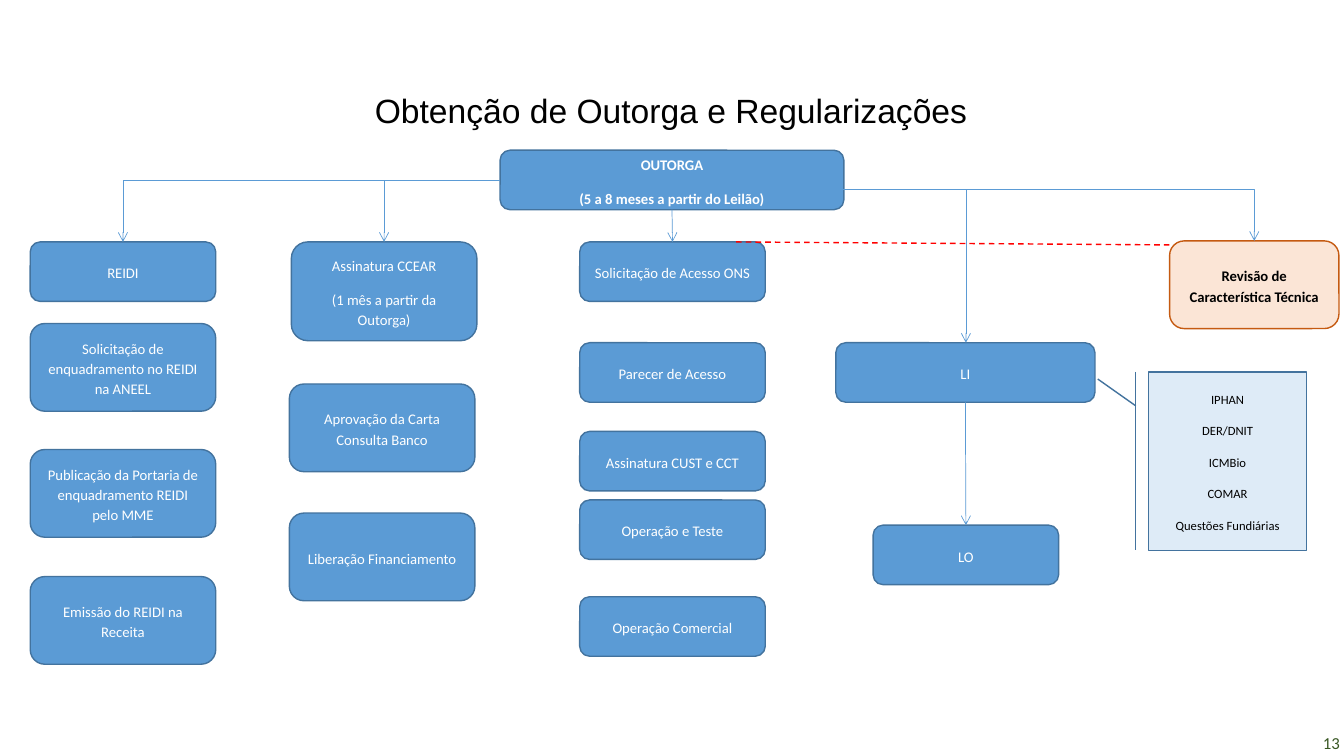
from dataclasses import dataclass

import lxml.etree
import pptx
import pptx.dml.color
import pptx.enum.dml
import pptx.enum.shapes
import pptx.enum.text
import pptx.oxml.ns
import pptx.util

Inches = pptx.util.Inches
SHAPE = pptx.enum.shapes.MSO_SHAPE
CONNECTOR = pptx.enum.shapes.MSO_CONNECTOR
ALIGN = pptx.enum.text.PP_ALIGN
qn = pptx.oxml.ns.qn


@dataclass(frozen=True)
class Theme:
    blue: str = "5B9BD5"
    outline: str = "43739E"
    peach: str = "FBE5D6"
    orange: str = "C55A11"
    pale: str = "DEEBF7"
    white: str = "FFFFFF"
    black: str = "000000"
    green: str = "385723"
    red: str = "FF0000"
    font: str = "Calibri"
    title_font: str = "Arial"
    title_size: float = 24
    box_size: float = 10.5
    note_size: float = 9
    number_size: float = 12


THEME = Theme()
BOX_W, SHORT, TALL = 1.84, 0.59, 0.87
TOP = 2.4


def rgb(color):
    return pptx.dml.color.RGBColor.from_string(color)


def set_text(tf, text, size=THEME.box_size, color=THEME.white, bold=False,
             font=THEME.font, align=ALIGN.CENTER, spacing=1.15, after=10):
    tf.word_wrap = True
    tf.auto_size = pptx.enum.text.MSO_AUTO_SIZE.NONE
    tf.vertical_anchor = pptx.enum.text.MSO_ANCHOR.MIDDLE
    for i, line in enumerate(text.split("\n")):
        p = tf.paragraphs[0] if i == 0 else tf.add_paragraph()
        p.alignment = align
        p.line_spacing = spacing
        p.space_before = pptx.util.Pt(0)
        p.space_after = pptx.util.Pt(after)
        r = p.add_run()
        r.text = line
        r.font.size = pptx.util.Pt(size)
        r.font.name = font
        r.font.bold = bold
        r.font.color.rgb = rgb(color)


def add_box(s, text, x, y, w=BOX_W, h=SHORT, fill=THEME.blue,
            outline=THEME.outline, kind=SHAPE.ROUNDED_RECTANGLE, **text_format):
    sp = s.shapes.add_shape(kind, Inches(x), Inches(y), Inches(w), Inches(h))
    sp.shadow.inherit = False
    sp.fill.solid()
    sp.fill.fore_color.rgb = rgb(fill)
    sp.line.color.rgb = rgb(outline)
    sp.line.width = pptx.util.Pt(1)
    set_text(sp.text_frame, text, **text_format)
    return sp


def add_line(s, start=(0, 0), end=(0, 0), color=THEME.blue, width=0.5,
             bent=False, arrow=True, dash=False, begin=None, finish=None):
    cxn = s.shapes.add_connector(
        CONNECTOR.ELBOW if bent else CONNECTOR.STRAIGHT,
        *(Inches(v) for v in (*start, *end)))
    if begin:
        cxn.begin_connect(*begin)
    if finish:
        cxn.end_connect(*finish)
    cxn.line.color.rgb = rgb(color)
    cxn.line.width = pptx.util.Pt(width)
    if dash:
        cxn.line.dash_style = pptx.enum.dml.MSO_LINE.DASH
    spPr = cxn._element.spPr
    if bent:
        spPr.find(qn("a:prstGeom")).set("prst", "bentConnector2")
    if arrow:
        lxml.etree.SubElement(spPr.find(qn("a:ln")), qn("a:tailEnd"), type="arrow")
    lxml.etree.SubElement(spPr, qn("a:effectLst"))


def add_title(s, text):
    title = s.shapes.title
    title.left, title.top = Inches(0.36), Inches(0.83)
    title.width, title.height = Inches(12.59), Inches(0.57)
    set_text(title.text_frame, text, size=THEME.title_size, color=THEME.black,
             font=THEME.title_font, spacing=0.9, after=0)


def add_page_number(s, text):
    sp = s.shapes.add_textbox(Inches(12.73), Inches(7.21), Inches(0.6), Inches(0.32))
    sp.text_frame.margin_right = Inches(0.04)
    set_text(sp.text_frame, text, size=THEME.number_size, color=THEME.green,
             align=ALIGN.RIGHT, spacing=1, after=0)


def add_columns(s):
    reidi = add_box(s, "REIDI", 0.3, TOP)
    for text, y in (("Solicitação de enquadramento no REIDI na ANEEL", 3.21),
                    ("Publicação da Portaria de enquadramento REIDI pelo MME", 4.46),
                    ("Emissão do REIDI na Receita", 5.72)):
        add_box(s, text, 0.3, y, h=TALL)

    ccear = add_box(s, "Assinatura CCEAR\n(1 mês a partir da Outorga)", 2.89, TOP, h=0.98)
    for text, y in (("Aprovação da Carta Consulta Banco", 3.81),
                    ("Liberação Financiamento", 5.09)):
        add_box(s, text, 2.87, y, h=TALL)

    access = add_box(s, "Solicitação de Acesso ONS", 5.75, TOP)
    for text, y in (("Parecer de Acesso", 3.4), ("Assinatura CUST e CCT", 4.28),
                    ("Operação e Teste", 4.96), ("Operação Comercial", 5.92)):
        add_box(s, text, 5.75, y)
    return reidi, ccear, access


def add_licences(s):
    li = add_box(s, "LI", 8.29, 3.4, w=2.57)
    lo = add_box(s, "LO", 8.66, 5.21)
    add_line(s, begin=(li, 2), finish=(lo, 0))
    callout = add_box(s, "IPHAN\nDER/DNIT\nICMBio\nCOMAR\nQuestões Fundiárias",
                      11.39, 3.69, w=1.57, h=1.77, fill=THEME.pale,
                      kind=SHAPE.LINE_CALLOUT_1_BORDER_AND_ACCENT_BAR,
                      size=THEME.note_size, color=THEME.black)
    for i, value in enumerate((0.19, -0.08, 0.04, -0.32)):
        callout.adjustments[i] = value


def main():
    prs = pptx.Presentation()
    prs.slide_width, prs.slide_height = Inches(13.33), Inches(7.5)
    s = prs.slides.add_slide(prs.slide_layouts[5])
    add_title(s, "Obtenção de Outorga e Regularizações")

    grant = add_box(s, "OUTORGA\n(5 a 8 meses a partir do Leilão)", 4.96, 1.49,
                    w=3.41, bold=True)
    reidi, ccear, access = add_columns(s)
    add_licences(s)
    add_box(s, "Revisão de Característica Técnica", 11.6, 2.39, w=1.68, h=TALL,
            fill=THEME.peach, outline=THEME.orange, color=THEME.black, bold=True)

    for target in (reidi, ccear):
        add_line(s, bent=True, begin=(grant, 1), finish=(target, 0))
    add_line(s, begin=(grant, 2), finish=(access, 0))
    add_line(s, (8.3, 1.88), (12.44, 2.39), bent=True)
    add_line(s, (6.49, 1.88), (9.58, 3.4), bent=True)
    add_line(s, (7.3, 2.4), (11.63, 2.43), color=THEME.red, width=1,
             arrow=False, dash=True)
    add_page_number(s, "13")
    prs.save("out.pptx")


if __name__ == "__main__":
    main()
